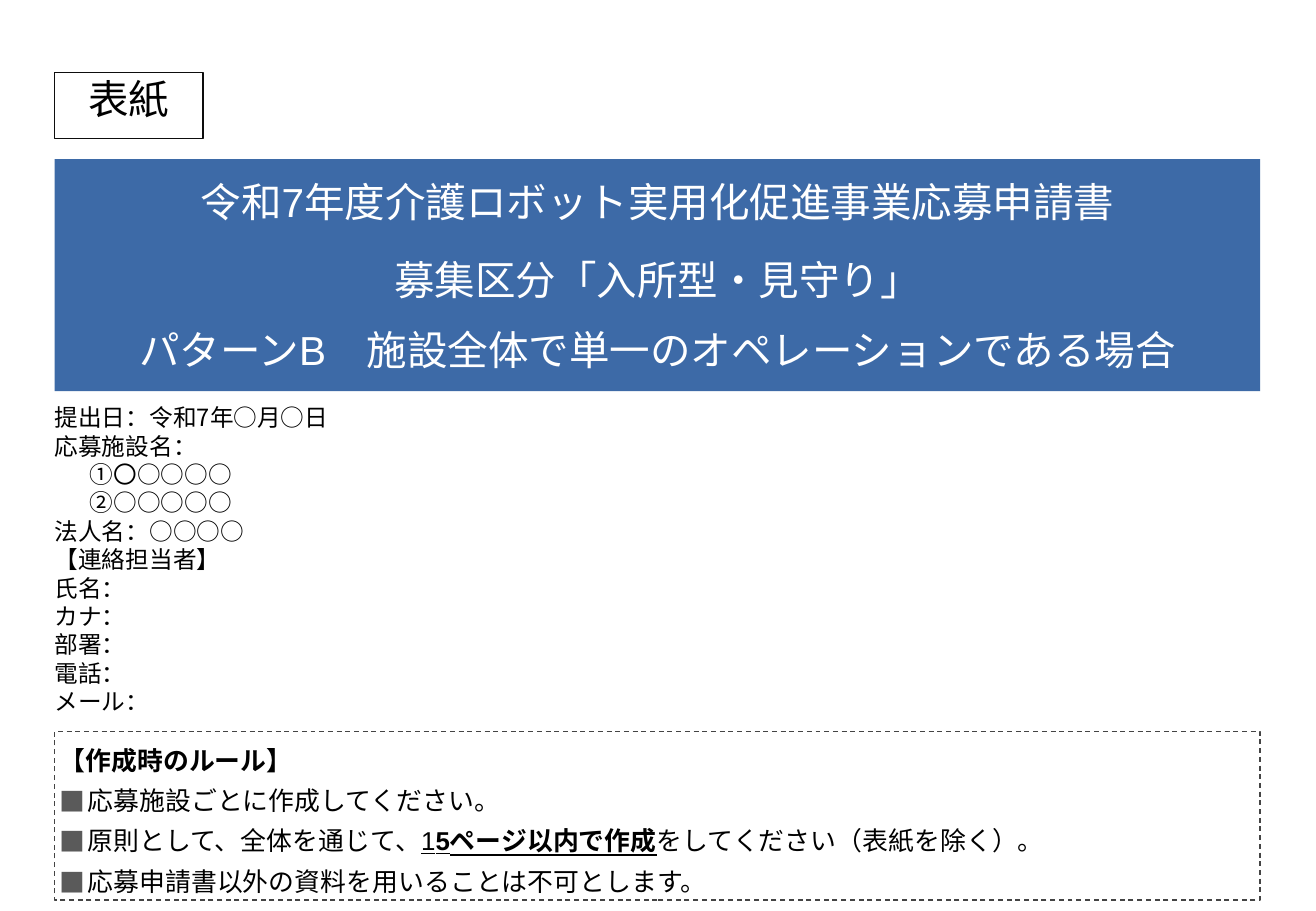
import dataclasses
import typing

import pptx
import pptx.dml.color
import pptx.enum.dml
import pptx.enum.shapes
import pptx.enum.text
import pptx.oxml.ns
import pptx.oxml.xmlchemy
import pptx.slide
import pptx.text.text
import pptx.util
from lxml import etree

EMU_PER_PX = 9144
EAST_ASIAN_FONT = "Noto Sans CJK JP"
COLOURS = {
    "ink": "000000",
    "white": "FFFFFF",
    "banner": "3D6AA7",
    "cover_edge": "0D0D0D",
    "rules_edge": "444444",
    "bullet": "5A5A5A",
}
LEFT = PP_LEFT = pptx.enum.text.PP_ALIGN.LEFT
CENTER = pptx.enum.text.PP_ALIGN.CENTER
TOP = pptx.enum.text.MSO_ANCHOR.TOP
MIDDLE = pptx.enum.text.MSO_ANCHOR.MIDDLE


@dataclasses.dataclass(frozen=True)
class Span:
    text: str
    bold: bool = False
    underline: bool = False


@dataclasses.dataclass(frozen=True)
class Line:
    spans: tuple[Span, ...]
    before: float = 0
    level: int = 0
    margin: int = 0
    hanging: int = 0
    bullet: str = ""


@dataclasses.dataclass(frozen=True)
class Panel:
    top: int
    width: int
    height: int
    lines: tuple[Line, ...]
    size: float
    pitch: float
    font: str = "Arial"
    ink: str = "ink"
    align: pptx.enum.text.PP_ALIGN = LEFT
    anchor: pptx.enum.text.MSO_ANCHOR = TOP
    insets: tuple[int, int, int, int] = (0, 0, 0, 0)
    fill: str = ""
    edge: str = ""
    dashed: bool = False
    left: int = 45


def px(length: int) -> pptx.util.Emu:
    return pptx.util.Emu(length * EMU_PER_PX)


def rgb(name: str) -> pptx.dml.color.RGBColor:
    return pptx.dml.color.RGBColor.from_string(COLOURS[name])


def applicant(text: str) -> Line:
    return Line((Span(text),), margin=29, hanging=29)


def facility(text: str) -> Line:
    return Line((Span(text),), level=1, margin=59, hanging=30)


def rule(*spans: Span) -> Line:
    return Line(spans, margin=23, hanging=23, bullet="■")


def add_bullet(defaults: typing.Any, symbol: str) -> None:
    qn = pptx.oxml.ns.qn
    tint = etree.Element(qn("a:buClr"))
    etree.SubElement(tint, qn("a:srgbClr"), val=COLOURS["bullet"])
    typeface = etree.Element(qn("a:buFont"), typeface=EAST_ASIAN_FONT)
    mark = etree.Element(qn("a:buChar"), char=symbol)
    for element in (tint, typeface, mark):
        defaults.addprevious(element)


def write_line(paragraph: pptx.text.text._Paragraph, line: Line, panel: Panel) -> None:
    paragraph.alignment = panel.align
    paragraph.level = line.level
    paragraph.line_spacing = pptx.util.Pt(panel.pitch)
    paragraph.space_before = pptx.util.Pt(line.before)
    paragraph.font.name = panel.font
    paragraph.font.size = pptx.util.Pt(panel.size)
    paragraph.font.color.rgb = rgb(panel.ink)
    properties = paragraph._p.get_or_add_pPr()
    properties.set("marL", str(px(line.margin)))
    properties.set("indent", str(px(-line.hanging)))
    defaults = properties.find(pptx.oxml.ns.qn("a:defRPr"))
    etree.SubElement(defaults, pptx.oxml.ns.qn("a:ea"), typeface=EAST_ASIAN_FONT)
    if line.bullet:
        add_bullet(defaults, line.bullet)
    for span in line.spans:
        run = paragraph.add_run()
        run.text = span.text
        if span.bold:
            run.font.bold = True
        if span.underline:
            run.font.underline = True


def draw_panel(slide: pptx.slide.Slide, panel: Panel) -> None:
    bounds = [px(n) for n in (panel.left, panel.top, panel.width, panel.height)]
    if panel.fill or panel.edge:
        box = slide.shapes.add_shape(pptx.enum.shapes.MSO_SHAPE.RECTANGLE, *bounds)
        box.shadow.inherit = False
        if panel.fill:
            box.fill.solid()
            box.fill.fore_color.rgb = rgb(panel.fill)
        else:
            box.fill.background()
        if panel.edge:
            box.line.color.rgb = rgb(panel.edge)
            box.line.width = pptx.util.Pt(0.75)
        else:
            box.line.fill.background()
        if panel.dashed:
            box.line.dash_style = pptx.enum.dml.MSO_LINE.DASH
    else:
        box = slide.shapes.add_textbox(*bounds)
    frame = box.text_frame
    frame.word_wrap = True
    frame.vertical_anchor = panel.anchor
    frame.margin_left, frame.margin_top, frame.margin_right, frame.margin_bottom = map(
        px, panel.insets
    )
    for index, line in enumerate(panel.lines):
        paragraph = frame.add_paragraph() if index else frame.paragraphs[0]
        write_line(paragraph, line, panel)


APPLICANT = Panel(
    328, 992, 269,
    (
        applicant("提出日：令和7年○月○日"),
        applicant("応募施設名："),
        facility("①〇○○○○"),
        facility("②○○○○○"),
        *map(applicant, (
            "法人名：○○○○", "【連絡担当者】", "氏名：", "カナ：", "部署：", "電話：", "メール：",
        )),
    ),
    size=14, pitch=16.8, font=EAST_ASIAN_FONT, insets=(0, 4, 0, 5),
)
RULES = Panel(
    602, 992, 139,
    (
        Line((Span("【作成時のルール】", bold=True),)),
        rule(Span("応募施設ごとに作成してください。")),
        rule(
            Span("原則として、全体を通じて、"),
            Span("1", underline=True),
            Span("5ページ以内で作成", bold=True, underline=True),
            Span("をしてください（表紙を除く）。"),
        ),
        rule(Span("応募申請書以外の資料を用いることは不可とします。")),
    ),
    size=15.3, pitch=23.9, anchor=MIDDLE, insets=(4, 4, 4, 4),
    edge="rules_edge", dashed=True,
)
COVER = Panel(
    60, 122, 54, (Line((Span("表紙"),), before=12),),
    size=24, pitch=29.2, align=CENTER, edge="cover_edge",
)
BANNER = Panel(
    131, 992, 191,
    (
        Line((Span("令和7年度介護ロボット実用化促進事業応募申請書"),), before=12),
        Line((Span("募集区分「入所型・見守り」"),), before=17),
        Line((Span("パターンB　施設全体で単一のオペレーションである場合"),), before=12),
    ),
    size=24, pitch=29.2, ink="white", align=CENTER, anchor=MIDDLE,
    insets=(2, 2, 2, 2), fill="banner",
)


def main() -> None:
    presentation = pptx.Presentation()
    presentation.slide_width = px(1083)
    presentation.slide_height = px(750)
    slide = presentation.slides.add_slide(presentation.slide_layouts[6])
    for panel in (APPLICANT, RULES, COVER, BANNER):
        draw_panel(slide, panel)
    presentation.save("out.pptx")


if __name__ == "__main__":
    main()
